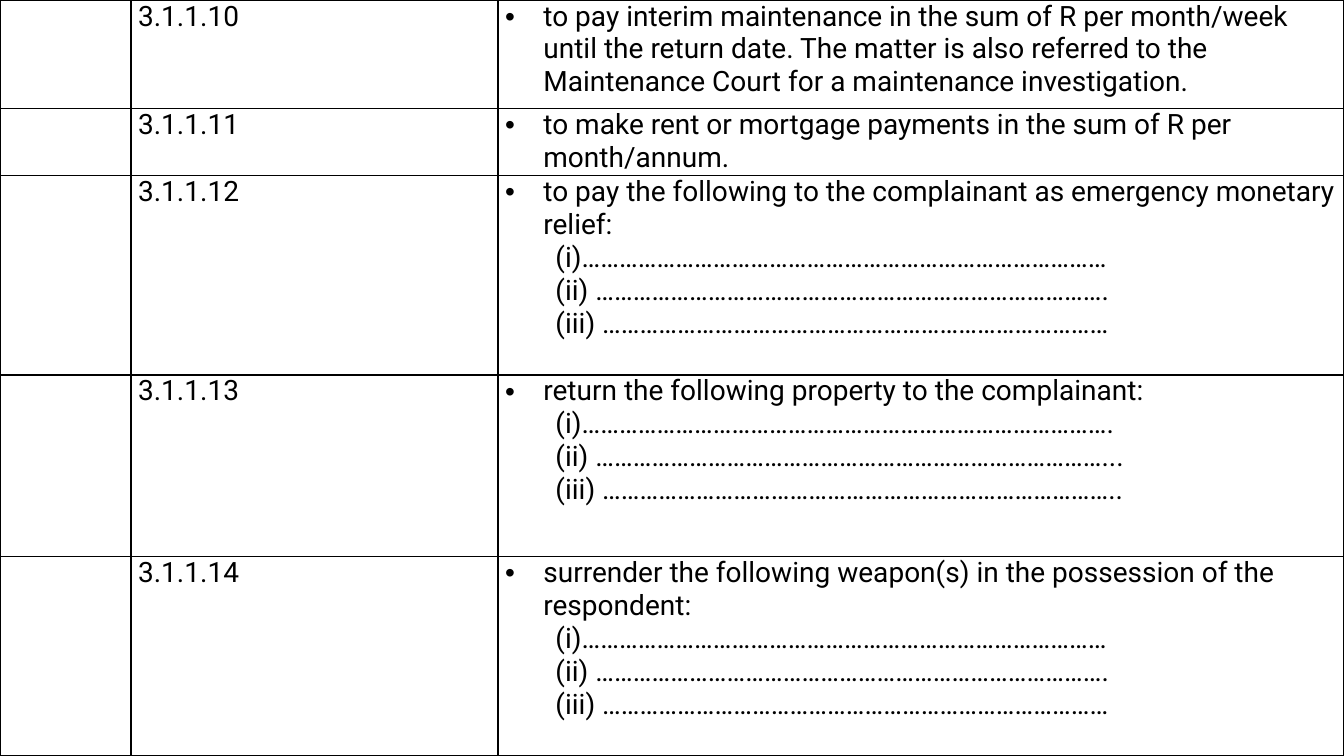
"""Build the slide listing the court order clauses 3.1.1.10 to 3.1.1.14."""
from dataclasses import dataclass

from lxml.etree import SubElement
from pptx import Presentation
from pptx.dml.color import RGBColor
from pptx.oxml import parse_xml
from pptx.oxml.ns import nsdecls, qn
from pptx.table import _Cell as Cell
from pptx.util import Emu, Inches, Pt

COLOURS = {"ink": "000000", "paper": "FFFFFF"}
FONT = "Roboto"
COLUMN_WIDTHS = (1.3, 3.64, 8.39)
BULLET_INDENT = Inches(0.38)
ENTRY_INDENT = Inches(0.5)

ENTRIES = (
    "(i)…………………………………………………………………………",
    "(ii) ……………………………………………………………………….",
    "(iii) ………………………………………………………………………",
)
PROPERTY_ENTRIES = (
    "(i)………………………………………………………………………….",
    "(ii) ………………………………………………………………………...",
    "(iii) ………………………………………………………………………..",
)


@dataclass(frozen=True)
class Clause:
    number: str
    order: str
    height: float
    entries: tuple[str, ...] = ()


CLAUSES = (
    Clause("3.1.1.10", "to pay interim maintenance in the sum of R per month/week until the "
           "return date. The matter is also referred to the Maintenance Court for a "
           "maintenance investigation.", 1.08),
    Clause("3.1.1.11", "to make rent or mortgage payments in the sum of R per month/annum.", 0.66),
    Clause("3.1.1.12", "to pay the following to the complainant as emergency monetary relief:",
           1.98, ENTRIES),
    Clause("3.1.1.13", "return the following property to the complainant:", 1.8, PROPERTY_ENTRIES),
    Clause("3.1.1.14", "surrender the following weapon(s) in the possession of the respondent:",
           1.98, ENTRIES),
)


def style_cell(cell: Cell) -> None:
    cell.margin_left = cell.margin_right = Inches(0.07)
    cell.margin_top = cell.margin_bottom = 0
    cell.fill.solid()
    cell.fill.fore_color.rgb = RGBColor.from_string(COLOURS["paper"])
    properties = cell._tc.get_or_add_tcPr()
    for position, side in enumerate(("lnL", "lnR", "lnT", "lnB")):
        border = parse_xml(
            f'<a:{side} {nsdecls("a")} w="{Pt(1)}"><a:solidFill>'
            f'<a:srgbClr val="{COLOURS["ink"]}"/></a:solidFill></a:{side}>'
        )
        properties.insert(position, border)


def write_lines(cell: Cell, lines: tuple[str, ...]) -> None:
    cell.text = "\n".join(lines)
    for paragraph in cell.text_frame.paragraphs:
        paragraph.font.name = FONT
        paragraph.font.size = Pt(20)
        paragraph.font.color.rgb = RGBColor.from_string(COLOURS["ink"])


def indent_order(cell: Cell) -> None:
    order, *entries = cell.text_frame.paragraphs
    properties = order._p.get_or_add_pPr()
    properties.set("marL", str(BULLET_INDENT))
    properties.set("indent", str(-BULLET_INDENT))
    bullet_font = parse_xml(f'<a:buFont {nsdecls("a")} typeface="Arial"/>')
    properties.insert(0, bullet_font)
    bullet = SubElement(properties, qn("a:buChar"), char="•")
    bullet_font.addnext(bullet)
    for entry in entries:
        entry._p.get_or_add_pPr().set("marL", str(ENTRY_INDENT))


def main() -> None:
    deck = Presentation()
    deck.slide_width, deck.slide_height = Inches(13.33), Inches(7.5)
    slide = deck.slides.add_slide(deck.slide_layouts[6])
    clauses_table = slide.shapes.add_table(
        len(CLAUSES), len(COLUMN_WIDTHS), Emu(0), Emu(0), deck.slide_width, deck.slide_height
    ).table
    clauses_table.first_row = clauses_table.horz_banding = False

    for column, width in zip(clauses_table.columns, COLUMN_WIDTHS):
        column.width = Inches(width)
    for row, clause in zip(clauses_table.rows, CLAUSES):
        row.height = Inches(clause.height)
        _, number_cell, order_cell = row.cells
        for cell in row.cells:
            style_cell(cell)
        write_lines(number_cell, (clause.number,))
        write_lines(order_cell, (clause.order, *clause.entries))
        indent_order(order_cell)

    deck.save("out.pptx")


if __name__ == "__main__":
    main()
